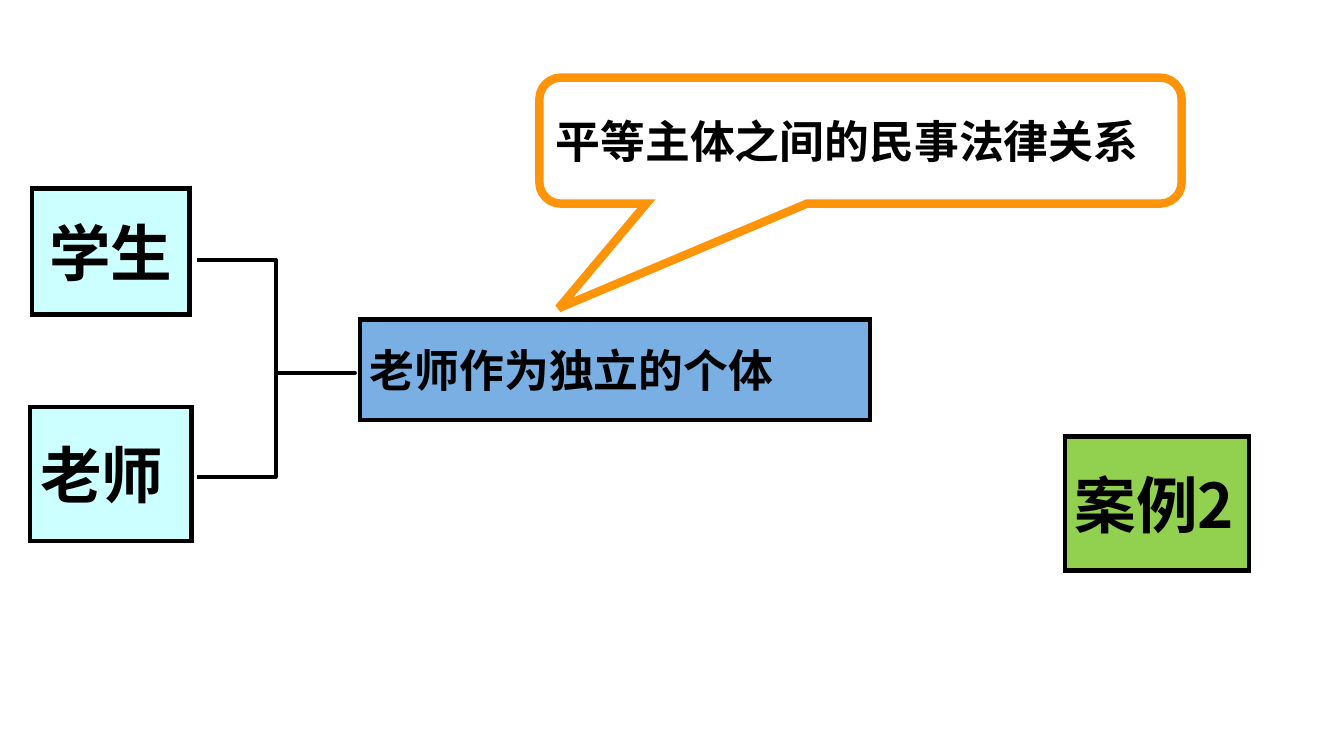
from lxml.etree import SubElement
from pptx import Presentation
from pptx.dml.color import RGBColor
from pptx.enum.shapes import MSO_SHAPE as Preset
from pptx.enum.text import MSO_ANCHOR as Anchor, PP_ALIGN as Align
from pptx.oxml.ns import qn
from pptx.util import Inches, Pt

FONT = "Noto Sans CJK SC"
COLORS = {
    "black": "000000",
    "cyan": "CCFFFF",
    "blue": "0066CC",
    "orange": "FF9409",
    "green": "92D050",
}
BOXES = [
    ("学生", (0.32, 1.87, 1.56, 1.25), "cyan", 44, Align.CENTER),
    ("老师", (0.3, 4.04, 1.6, 1.33), "cyan", 44, Align.LEFT),
    ("老师作为独立的个体", (3.57, 3.17, 5.06, 1), "blue", 32, Align.LEFT),
    ("案例2", (10.56, 4.33, 1.83, 1.33), "green", 44, Align.LEFT),
]
BRACE = ((1.95, 2.58, 1.57, 2.15), (0, 0.52))
CALLOUT = ("平等主体之间的民事法律关系", (5.35, 0.77, 6.37, 1.25), (-0.47, 1.33, 0.17))
BLUE_ALPHA = 52


def color(name):
    return RGBColor.from_string(COLORS[name])


def add_outline(slide, preset, place, line="black", width=3, adjustments=()):
    shape = slide.shapes.add_shape(preset, *map(Inches, place))
    shape.shadow.inherit = False
    shape.fill.background()
    shape.line.color.rgb = color(line)
    shape.line.width = Pt(width)
    for index, value in enumerate(adjustments):
        shape.adjustments[index] = value
    return shape


def sharpen_corners(shape):
    outline = shape.element.spPr.find(qn("a:ln"))
    SubElement(outline, qn("a:miter"), lim="800000")


def write(shape, text, size, align=Align.LEFT, wrap=False):
    frame = shape.text_frame
    frame.word_wrap = wrap
    frame.vertical_anchor = Anchor.MIDDLE
    paragraph = frame.paragraphs[0]
    paragraph.alignment = align
    run = paragraph.add_run()
    run.text = text
    run.font.size = Pt(size)
    run.font.bold = True
    run.font.color.rgb = color("black")
    run.font.name = FONT
    SubElement(run._r.get_or_add_rPr(), qn("a:ea"), typeface=FONT)


def add_box(slide, text, place, fill, size, align):
    shape = add_outline(slide, Preset.RECTANGLE, place)
    sharpen_corners(shape)
    shape.fill.solid()
    shape.fill.fore_color.rgb = color(fill)
    if fill == "blue":
        tint = shape.element.spPr.find(qn("a:solidFill")).find(qn("a:srgbClr"))
        SubElement(tint, qn("a:alpha"), val=str(BLUE_ALPHA * 1000))
    write(shape, text, size, align)


def main():
    presentation = Presentation()
    presentation.slide_width = Inches(13.33)
    presentation.slide_height = Inches(7.5)
    slide = presentation.slides.add_slide(presentation.slide_layouts[6])

    for box in BOXES:
        add_box(slide, *box)

    brace_place, brace_adjustments = BRACE
    add_outline(slide, Preset.RIGHT_BRACE, brace_place, adjustments=brace_adjustments)

    text, place, adjustments = CALLOUT
    callout = add_outline(
        slide, Preset.ROUNDED_RECTANGULAR_CALLOUT, place, "orange", 6, adjustments
    )
    sharpen_corners(callout)
    write(callout, text, 32, wrap=True)

    presentation.save("out.pptx")


if __name__ == "__main__":
    main()
